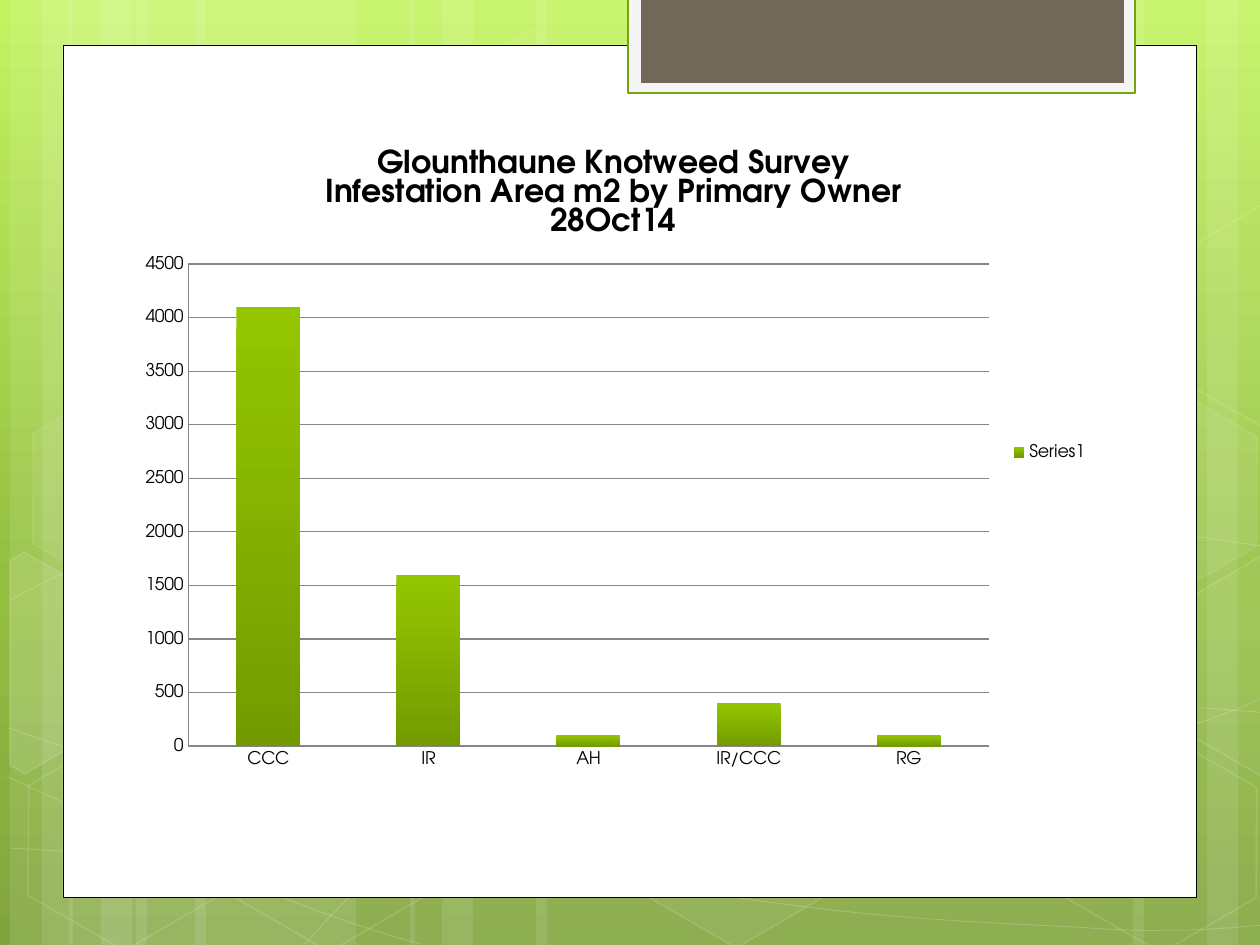
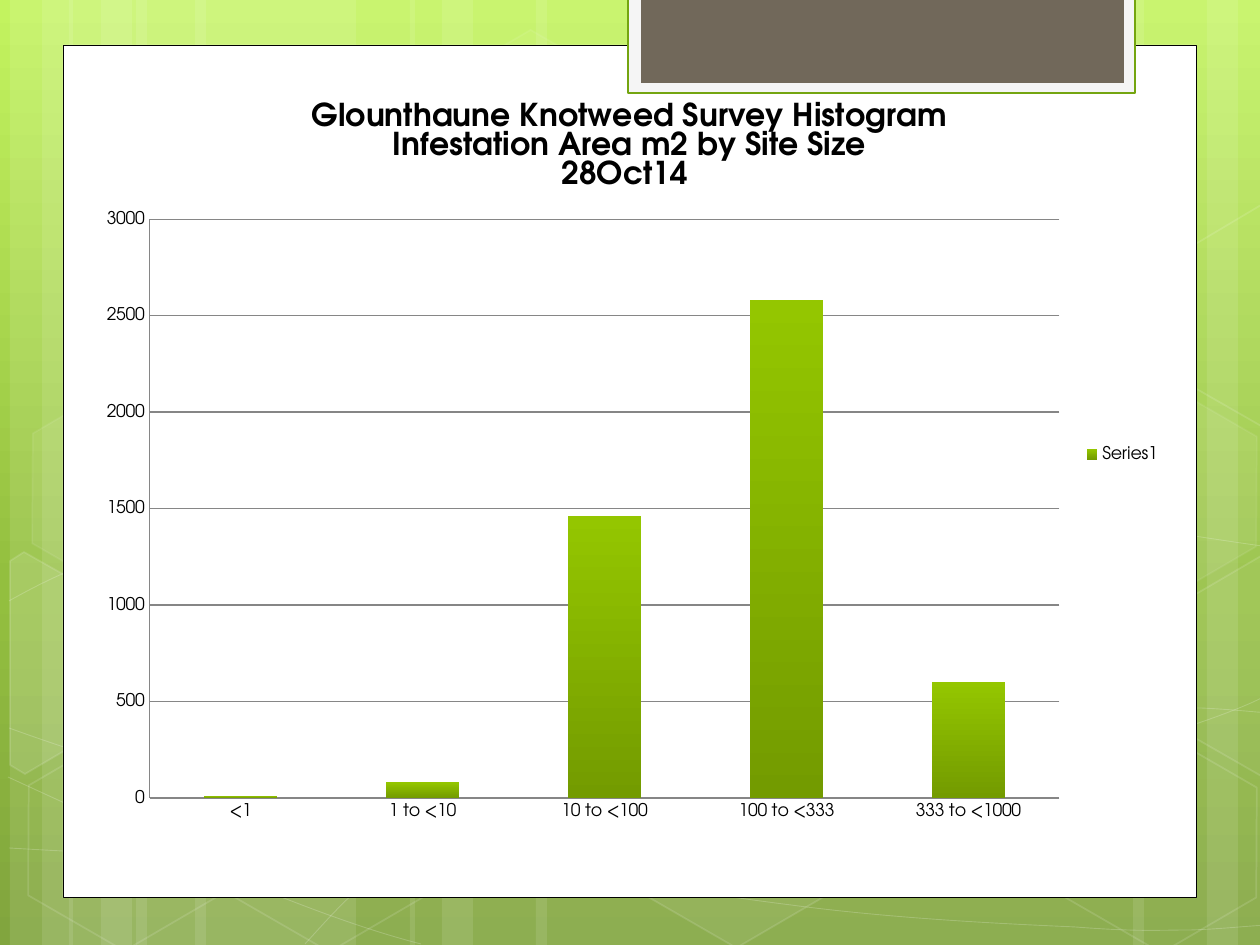
import copy
import dataclasses

import lxml.etree
import pptx
import pptx.chart.data
import pptx.dml.color
import pptx.enum.chart
import pptx.enum.shapes
import pptx.oxml.ns
import pptx.util

CHART_SLIDES = [
    {
        "title": [
            "Glounthaune Knotweed Survey",
            "Infestation Area m2 by Primary Owner",
            "28Oct14",
        ],
        "areas": {"CCC": 4100, "IR": 1600, "AH": 100, "IR/CCC": 400, "RG": 100},
        "axis_top": 4500,
        "frame": (126, 124, 975, 656),
    },
    {
        "title": [
            "Glounthaune Knotweed Survey Histogram",
            "Infestation Area m2 by Site Size",
            "28Oct14 ",
        ],
        "areas": {"<1": 10, "1 to <10": 80, "10 to <100": 1460, "100 to <333": 2580, "333 to <1000": 600},
        "axis_top": 3000,
        "frame": (85, 75, 1089, 759),
    },
]
AXIS_STEP = 500


@dataclasses.dataclass(frozen=True)
class Theme:
    font: str = "TeX Gyre Adventor"
    title_size: int = 18
    label_size: int = 10
    text: str = "000000"
    white: str = "FFFFFF"
    tab_rim: str = "F5F5F5"
    tab_line: str = "74A510"
    tab: str = "71685A"
    grid: str = "868686"
    backdrop: tuple = ((0, "C3F35F"), (0.62, "93BF3F"), (1, "81A53E"))
    bar: tuple = ((0, "94C600"), (1, "739B00"))


THEME = Theme()
PAGE_WIDTH, PAGE_HEIGHT = 1260, 945
PX = pptx.util.Inches(1) / 126

BAND_CLUSTERS = [(10, 1, 220), (69, 1, 220), (1270, -1, 220), (410, 1, 388)]
HEXAGON_SIZE = (220, 191)
HEXAGONS = [
    (421, 45, 4, 8), (626, 742, 6, 12), (14, 745, None, 12), (18, 393, 7, 8),
    (219, 746, None, 12), (949, 571, 10, 12), (1051, 747, None, 12), (1051, 396, 7, 8),
]
CUT_HEXAGONS = [
    ([(10, 561), (24, 552), (121, 607), (120, 718), (25, 774), (10, 765)], 10),
    ([(1167, 611), (1261, 556), (1271, 562), (1271, 772), (1263, 777), (1167, 722)], 4),
    ([(1167, 261), (1261, 205), (1273, 212), (1271, 422), (1263, 427), (1167, 372)], None),
]
CURVES = [
    [(9, 848), (77, 852, 145, 856, 239, 854), (334, 853, 451, 851, 577, 838),
     (703, 825, 882, 801, 998, 777), (1113, 753, 1231, 716, 1269, 694)],
    [(9, 601), (45, 581, 82, 562, 152, 543), (224, 524, 326, 496, 437, 488),
     (549, 479, 685, 478, 824, 488), (963, 498, 1193, 537, 1269, 547)],
    [(8, 777), (160, 847, 311, 916, 421, 944)],
    [(9, 728), (48, 742, 88, 756, 161, 776), (234, 795, 344, 827, 450, 848),
     (554, 869, 687, 892, 791, 905), (896, 919, 1008, 924, 1075, 927),
     (1140, 932, 1158, 930, 1191, 930), (1223, 929, 1246, 926, 1269, 925)],
    [(305, 944), (328, 919, 350, 893, 381, 871), (411, 848, 454, 823, 489, 805),
     (524, 788, 546, 780, 592, 767), (638, 755, 722, 737, 766, 728),
     (811, 719, 818, 719, 857, 717), (896, 713, 958, 709, 1000, 708),
     (1045, 707, 1116, 708, 1116, 708), (1201, 708),
     (1223, 709, 1245, 711, 1256, 712), (1268, 713, 1264, 712, 1268, 713)],
]
PANELS = [
    ((63, 45, 1134, 853), THEME.white, THEME.text, 0.5),
    ((628, -3, 507, 96), THEME.tab_rim, THEME.tab_line, 1.25),
    ((641, -3, 483, 86), THEME.tab, None, 0),
]


def rgb(code):
    return pptx.dml.color.RGBColor.from_string(code)


def emu(*lengths):
    return [pptx.util.Emu(round(length * PX)) for length in lengths]


def fade(parent, opacity):
    for color in parent.iter(pptx.oxml.ns.qn("a:srgbClr")):
        alpha = lxml.etree.SubElement(color, pptx.oxml.ns.qn("a:alpha"))
        alpha.set("val", str(opacity * 1000))


def paint(shape, fill=None, opacity=100, line=None, width=1, line_opacity=100):
    shape.shadow.inherit = False
    properties = shape.element.spPr
    if fill:
        shape.fill.solid()
        shape.fill.fore_color.rgb = rgb(fill)
        if opacity < 100:
            fade(properties, opacity)
    else:
        shape.fill.background()
    if line:
        shape.line.color.rgb = rgb(line)
        shape.line.width = pptx.util.Pt(width)
        if line_opacity < 100:
            fade(properties.find(pptx.oxml.ns.qn("a:ln")), line_opacity)
    else:
        shape.line.fill.background()


def paint_glass(shape, opacity, line_opacity):
    paint(shape, fill=THEME.white if opacity else None, opacity=opacity,
          line=THEME.white, line_opacity=line_opacity)


def paint_gradient(fill, stops):
    fill.gradient()
    fill.gradient_angle = 270
    last_stop = fill.gradient_stops[-1].element
    for _ in stops[2:]:
        last_stop.addnext(copy.deepcopy(last_stop))
    for stop, (position, color) in zip(fill.gradient_stops, stops):
        stop.position = position
        stop.color.rgb = rgb(color)


def add_box(shapes, kind, frame):
    return shapes.add_shape(kind, *emu(*frame))


def add_outline(shapes, points, close):
    builder = shapes.build_freeform(*points[0], scale=PX)
    builder.add_line_segments(points[1:], close=close)
    return builder.convert_to_shape()


def add_curve(shapes, curve):
    anchors = [segment[-2:] for segment in curve]
    left = min(x for x, y in anchors)
    top = min(y for x, y in anchors)
    shape = add_outline(shapes, anchors, close=False)
    lines = list(shape.element.iter(pptx.oxml.ns.qn("a:lnTo")))
    for line, segment in zip(lines, curve[1:]):
        if len(segment) == 2:
            continue
        bezier = lxml.etree.Element(pptx.oxml.ns.qn("a:cubicBezTo"))
        for x, y in zip(segment[::2], segment[1::2]):
            point = lxml.etree.SubElement(bezier, pptx.oxml.ns.qn("a:pt"))
            point.set("x", str(x - left))
            point.set("y", str(y - top))
        line.getparent().replace(line, bezier)
    return shape


def draw_backdrop(shapes):
    rectangle = pptx.enum.shapes.MSO_SHAPE.RECTANGLE
    hexagon = pptx.enum.shapes.MSO_SHAPE.HEXAGON
    for edge, direction, widest in BAND_CLUSTERS:
        for offset, width in ((126, widest), (0, 63), (32, 105)):
            left = edge + offset if direction > 0 else edge - offset - width
            paint(add_box(shapes, rectangle, (left, 0, width, PAGE_HEIGHT)), THEME.white, 10)
    for curve in CURVES:
        paint(add_curve(shapes, curve), line=THEME.white, width=0.5, line_opacity=20)
    for left, top, opacity, line_opacity in HEXAGONS:
        shape = add_box(shapes, hexagon, (left, top, *HEXAGON_SIZE))
        shape.adjustments[0] = 0.285
        shape.rotation = 30
        paint_glass(shape, opacity, line_opacity)
    for points, opacity in CUT_HEXAGONS:
        paint_glass(add_outline(shapes, points, close=True), opacity, 12)
    for frame, fill, line, width in PANELS:
        paint(add_box(shapes, rectangle, frame), fill, line=line, width=width)


def format_font(font, size, bold=False, color=THEME.text):
    font.name = THEME.font
    font.size = pptx.util.Pt(size)
    font.bold = bold
    font.color.rgb = rgb(color)


def write_text(text_frame, lines, **font_format):
    for index, line in enumerate(lines):
        para = text_frame.add_paragraph() if index else text_frame.paragraphs[0]
        span = para.add_run()
        span.text = line
        format_font(span.font, **font_format)


def add_area_chart(page, title, areas, axis_top, frame):
    data = pptx.chart.data.CategoryChartData()
    data.categories = list(areas)
    data.add_series("", list(areas.values()))
    kind = pptx.enum.chart.XL_CHART_TYPE.COLUMN_CLUSTERED
    chart = page.shapes.add_chart(kind, *emu(*frame), data).chart
    format_font(chart.font, THEME.label_size)
    for series in chart.element.iter(pptx.oxml.ns.qn("c:ser")):
        series.remove(series.find(pptx.oxml.ns.qn("c:tx")))

    chart.has_title = True
    chart.chart_title.include_in_layout = False
    write_text(chart.chart_title.text_frame, title, size=THEME.title_size, bold=True)

    chart.has_legend = True
    chart.legend.position = pptx.enum.chart.XL_LEGEND_POSITION.RIGHT
    chart.legend.include_in_layout = False

    plot = chart.plots[0]
    plot.gap_width = 150
    plot.vary_by_categories = False
    paint_gradient(plot.series[0].format.fill, THEME.bar)

    values = chart.value_axis
    values.minimum_scale = 0
    values.maximum_scale = axis_top
    values.major_unit = AXIS_STEP
    values.has_major_gridlines = True
    for axis in (chart.category_axis, values):
        axis.major_tick_mark = pptx.enum.chart.XL_TICK_MARK.NONE
        axis.minor_tick_mark = pptx.enum.chart.XL_TICK_MARK.NONE
    for part in (chart.category_axis, values, values.major_gridlines):
        part.format.line.color.rgb = rgb(THEME.grid)
        part.format.line.width = pptx.util.Pt(0.75)


def main():
    deck = pptx.Presentation()
    deck.slide_width, deck.slide_height = emu(PAGE_WIDTH, PAGE_HEIGHT)
    layout = deck.slide_layouts[6]
    for placeholder in list(layout.placeholders):
        layout.shapes.element.remove(placeholder.element)
    paint_gradient(layout.background.fill, THEME.backdrop)
    pages = [deck.slides.add_slide(layout) for _ in CHART_SLIDES]

    backdrop = pages[0].shapes.add_group_shape()
    draw_backdrop(backdrop.shapes)
    layout.shapes.element.insert(2, backdrop.element)

    for page, content in zip(pages, CHART_SLIDES):
        add_area_chart(page, **content)
    deck.save("out.pptx")


if __name__ == "__main__":
    main()
